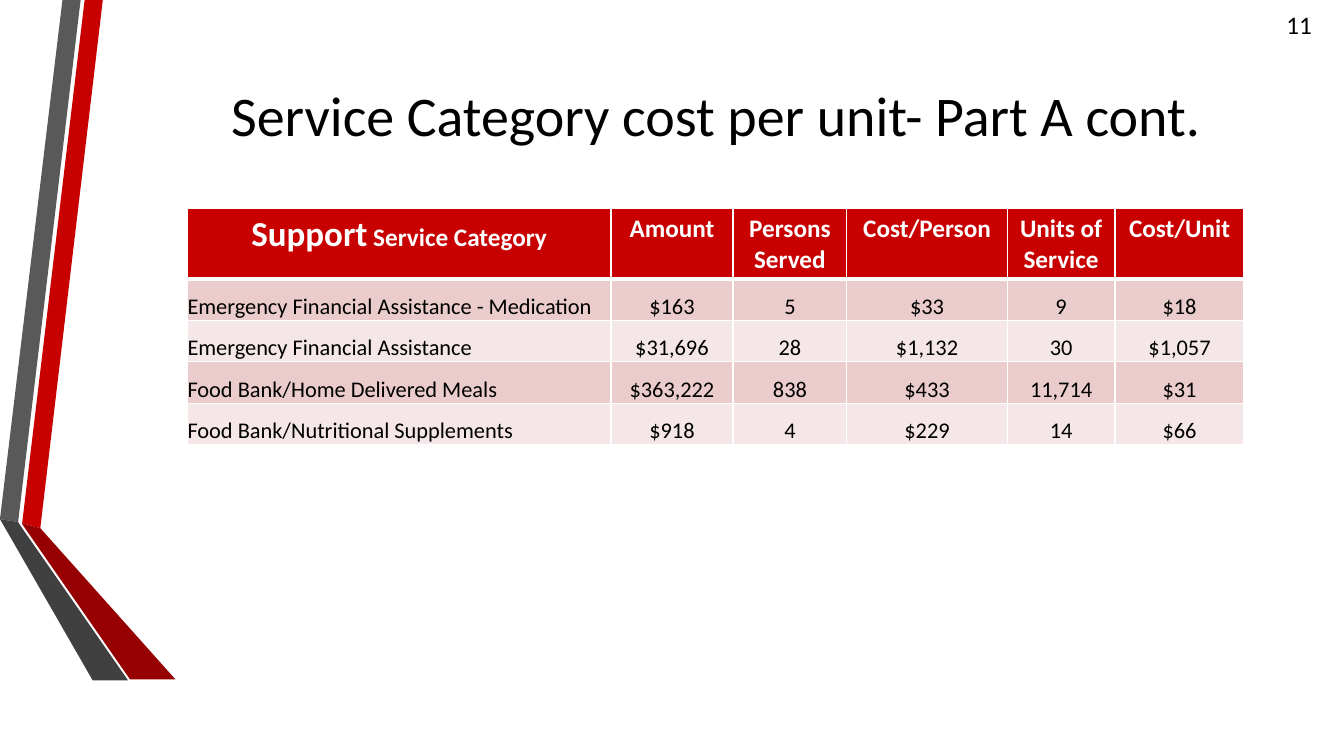
from lxml import etree
from pptx import Presentation, util as u
from pptx.dml.color import RGBColor
from pptx.enum import text
from pptx.oxml import ns

RED = RGBColor(0xC8, 0x00, 0x00)
DARK_RED = RGBColor(0x96, 0x00, 0x00)
GREY = RGBColor(0x59, 0x59, 0x59)
DARK_GREY = RGBColor(0x40, 0x40, 0x40)
PINK = RGBColor(0xEB, 0xCC, 0xCC)
PALE_PINK = RGBColor(0xF5, 0xE7, 0xE7)
WHITE = RGBColor(0xFF, 0xFF, 0xFF)
BLACK = RGBColor(0x00, 0x00, 0x00)

TITLE = "Service Category cost per unit- Part A cont."
PAGE_NUMBER = "11"
HEADINGS = [
    [("Support", 25), (" Service Category", 18)],
    [("Amount", 18)],
    [("Persons Served", 18)],
    [("Cost/Person", 18)],
    [("Units of Service", 18)],
    [("Cost/Unit", 18)],
]
SERVICES = [
    ("Emergency Financial Assistance - Medication", "$163", "5", "$33", "9", "$18"),
    ("Emergency Financial Assistance", "$31,696", "28", "$1,132", "30", "$1,057"),
    ("Food Bank/Home Delivered Meals", "$363,222", "838", "$433", "11,714", "$31"),
    ("Food Bank/Nutritional Supplements", "$918", "4", "$229", "14", "$66"),
]
COLUMN_WIDTHS = [4.2, 1.21, 1.13, 1.59, 1.07, 1.28]
HEADER_HEIGHT, SERVICE_HEIGHT = 0.7, 0.41
THIN, THICK = 1, 3

# Ribbon corners in hundredths of an inch
RIBBONS = [
    (RED, [(22, 519), (40, 524), (102, 0), (84, 0)]),
    (GREY, [(80, 0), (62, 0), (0, 515), (18, 518)]),
    (DARK_RED, [(22, 520), (129, 674), (174, 674), (40, 524), (22, 519)]),
    (DARK_GREY, [(127, 675), (22, 524), (18, 518), (0, 515), (92, 675)]),
]


def add_run(paragraph, words, **font_format):
    run = paragraph.add_run()
    run.text = words
    run.font.name = "Calibri"
    run.font.color.rgb = font_format.pop("color")
    for name, value in font_format.items():
        setattr(run.font, name, value)


def set_borders(cell, top, bottom):
    """Give a cell white borders; top and bottom are widths in points."""
    properties = cell._tc.get_or_add_tcPr()
    widths = {"lnL": THIN, "lnR": THIN, "lnT": top, "lnB": bottom}
    for position, (side, width) in enumerate(widths.items()):
        line = etree.Element(ns.qn("a:" + side), w=str(u.Pt(width)))
        fill = etree.SubElement(line, ns.qn("a:solidFill"))
        etree.SubElement(fill, ns.qn("a:srgbClr"), val=str(WHITE))
        properties.insert(position, line)


def format_cell(cell, color, top, bottom, **layout):
    cell.fill.solid()
    cell.fill.fore_color.rgb = color
    for name, value in layout.items():
        setattr(cell, name, value)
    set_borders(cell, top, bottom)


def add_ribbons(slide):
    for color, (start, *corners) in RIBBONS:
        builder = slide.shapes.build_freeform(*start, scale=u.Inches(0.01))
        builder.add_line_segments(corners, close=True)
        ribbon = builder.convert_to_shape()
        ribbon.shadow.inherit = False
        ribbon.fill.solid()
        ribbon.fill.fore_color.rgb = color
        ribbon.line.fill.background()


def add_page_number(slide):
    box = slide.shapes.add_textbox(*map(u.Inches, (12.66, 0.04, 0.67, 0.4)))
    box.text_frame.word_wrap = True
    add_run(box.text_frame.paragraphs[0], PAGE_NUMBER, size=u.Pt(18), color=BLACK)


def fill_title(slide):
    title = slide.shapes.title
    place = {"left": 1.62, "top": 0.2, "width": 10.96, "height": 1.87}
    for name, value in place.items():
        setattr(title, name, u.Inches(value))
    title.text_frame.vertical_anchor = text.MSO_ANCHOR.MIDDLE
    paragraph = title.text_frame.paragraphs[0]
    paragraph.alignment = text.PP_ALIGN.CENTER
    add_run(paragraph, TITLE, size=u.Pt(40), color=BLACK)


def add_cost_table(slide):
    heights = [HEADER_HEIGHT] + [SERVICE_HEIGHT] * len(SERVICES)
    costs = slide.shapes.add_table(
        len(heights), len(COLUMN_WIDTHS), u.Inches(1.86), u.Inches(2.07),
        u.Inches(sum(COLUMN_WIDTHS)), u.Inches(sum(heights))).table
    for column, width in zip(costs.columns, COLUMN_WIDTHS):
        column.width = u.Inches(width)
    for row, height in zip(costs.rows, heights):
        row.height = u.Inches(height)

    for col, heading in enumerate(HEADINGS):
        cell = costs.cell(0, col)
        format_cell(cell, RED, THIN, THICK)
        paragraph = cell.text_frame.paragraphs[0]
        paragraph.alignment = text.PP_ALIGN.CENTER
        for words, size in heading:
            add_run(paragraph, words, size=u.Pt(size), bold=True, color=WHITE)

    for row, service in enumerate(SERVICES, start=1):
        for col, value in enumerate(service):
            cell = costs.cell(row, col)
            format_cell(cell, PINK if row % 2 else PALE_PINK,
                        THICK if row == 1 else THIN, THIN,
                        vertical_anchor=text.MSO_ANCHOR.BOTTOM,
                        margin_left=0, margin_right=0, margin_top=0, margin_bottom=0)
            paragraph = cell.text_frame.paragraphs[0]
            paragraph.alignment = text.PP_ALIGN.CENTER if col else text.PP_ALIGN.LEFT
            add_run(paragraph, value, size=u.Pt(16), bold=False, color=BLACK)


def main():
    deck = Presentation()
    deck.slide_width, deck.slide_height = u.Inches(13.33), u.Inches(7.5)
    slide = deck.slides.add_slide(deck.slide_layouts[5])
    add_ribbons(slide)
    add_page_number(slide)
    fill_title(slide)
    add_cost_table(slide)
    deck.save("out.pptx")


if __name__ == "__main__":
    main()
